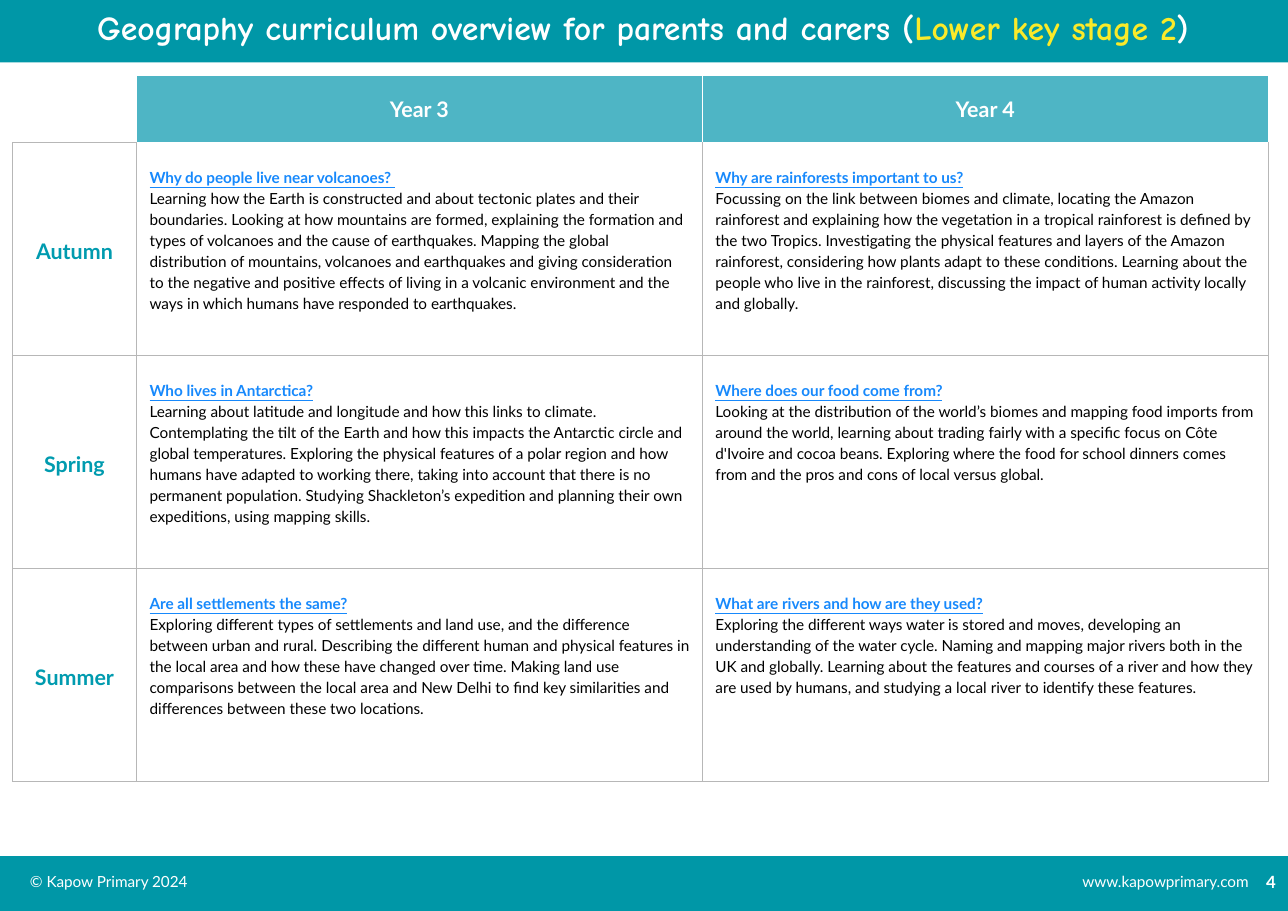
"""Build the Lower key stage 2 geography overview slide."""
from lxml.etree import SubElement
from pptx import Presentation
from pptx.dml.color import RGBColor
from pptx.enum.shapes import MSO_SHAPE
from pptx.enum.text import MSO_ANCHOR, MSO_AUTO_SIZE, PP_ALIGN
from pptx.oxml.ns import qn
from pptx.util import Pt

COLORS = {
    "teal": "0097A7", "header": "4EB5C5", "label": "009BAF", "link": "1789FC",
    "yellow": "FAEA2A", "grid": "B7B7B7", "white": "FFFFFF", "black": "000000",
}
WIDTH, HEIGHT = 841.68, 595.44
YEARS = ["Year 3", "Year 4"]
TERMS = {
    "Autumn": [
        ("Why do people live near volcanoes? ",
         "Learning how the Earth is constructed and about tectonic plates and their boundaries. "
         "Looking at how mountains are formed, explaining the formation and types of volcanoes "
         "and the cause of earthquakes. Mapping the global distribution of mountains, volcanoes "
         "and earthquakes and giving consideration to the negative and positive effects of living "
         "in a volcanic environment and the ways in which humans have responded to earthquakes."),
        ("Why are rainforests important to us?",
         "Focussing on the link between biomes and climate, locating the Amazon rainforest and "
         "explaining how the vegetation in a tropical rainforest is defined by the two Tropics. "
         "Investigating the physical features and layers of the Amazon rainforest, considering "
         "how plants adapt to these conditions. Learning about the people who live in the "
         "rainforest, discussing the impact of human activity locally and globally."),
    ],
    "Spring": [
        ("Who lives in Antarctica?",
         "Learning about latitude and longitude and how this links to climate. Contemplating the "
         "tilt of the Earth and how this impacts the Antarctic circle and global temperatures. "
         "Exploring the physical features of a polar region and how humans have adapted to "
         "working there, taking into account that there is no permanent population. Studying "
         "Shackleton’s expedition and planning their own expeditions, using mapping skills."),
        ("Where does our food come from?",
         "Looking at the distribution of the world’s biomes and mapping food imports from around "
         "the world, learning about trading fairly with a specific focus on Côte d'Ivoire and "
         "cocoa beans. Exploring where the food for school dinners comes from and the pros and "
         "cons of local versus global."),
    ],
    "Summer": [
        ("Are all settlements the same?",
         "Exploring different types of settlements and land use, and the difference between urban "
         "and rural. Describing the different human and physical features in the local area and "
         "how these have changed over time. Making land use comparisons between the local area "
         "and New Delhi to find key similarities and differences between these two locations."),
        ("What are rivers and how are they used?",
         "Exploring the different ways water is stored and moves, developing an understanding of "
         "the water cycle. Naming and mapping major rivers both in the UK and globally. Learning "
         "about the features and courses of a river and how they are used by humans, and studying "
         "a local river to identify these features."),
    ],
}


def rgb(name):
    return RGBColor.from_string(COLORS[name])


def style(p, size, color, bold=False, align=PP_ALIGN.LEFT, spacing=1.0, font="Lato"):
    p.alignment = align
    p.line_spacing = spacing
    p.font.name = font
    p.font.size = Pt(size)
    p.font.bold = bold
    p.font.color.rgb = rgb(color)


def set_margins(tf, x, y):
    tf.margin_left = tf.margin_right = Pt(x)
    tf.margin_top = tf.margin_bottom = Pt(y)


def add_bar(s, top, height):
    bar = s.shapes.add_shape(MSO_SHAPE.RECTANGLE, 0, Pt(top), Pt(WIDTH), Pt(height))
    bar.shadow.inherit = False
    bar.fill.solid()
    bar.fill.fore_color.rgb = rgb("teal")
    bar.line.fill.background()


def add_label(s, text, left, top, width, height, margin, size, **options):
    tf = s.shapes.add_textbox(Pt(left), Pt(top), Pt(width), Pt(height)).text_frame
    tf.word_wrap = True
    set_margins(tf, margin, margin)
    p = tf.paragraphs[0]
    p.text = text
    style(p, size, "white", **options)


def place_title(s):
    sp = s.shapes.title
    sp.left, sp.top, sp.width, sp.height = Pt(-0.7), Pt(-2.2), Pt(WIDTH), Pt(42.5)
    sp.element.getparent().append(sp.element)
    tf = sp.text_frame
    tf.auto_size = MSO_AUTO_SIZE.NONE
    tf.vertical_anchor = MSO_ANCHOR.TOP
    tf.word_wrap = True
    set_margins(tf, 9.4, 9.4)
    p = tf.paragraphs[0]
    style(p, 22, "white", True, PP_ALIGN.CENTER, 0.9, "Comic Neue")
    for text, color in [("Geography curriculum overview for parents and carers (", "white"),
                        ("Lower key stage 2", "yellow"), (")", "white")]:
        r = p.add_run()
        r.text = text
        r.font.color.rgb = rgb(color)


def set_borders(cell, **sides):
    tcPr = cell._tc.get_or_add_tcPr()
    for side in "LRTB":
        ln = SubElement(tcPr, qn(f"a:ln{side}"), w=str(Pt(0.75)))
        if side in sides:
            fill = SubElement(ln, qn("a:solidFill"))
            SubElement(fill, qn("a:srgbClr"), val=COLORS[sides[side]])
        else:
            SubElement(ln, qn("a:noFill"))


def fill_cell(cell, color=None):
    if color:
        cell.fill.solid()
        cell.fill.fore_color.rgb = rgb(color)
    else:
        cell.fill.background()
    set_margins(cell, 8.6, 10.8)


def head_cell(cell, text, color, spacing=1.0):
    cell.vertical_anchor = MSO_ANCHOR.MIDDLE
    p = cell.text_frame.paragraphs[0]
    p.text = text
    style(p, 14, color, True, PP_ALIGN.CENTER, spacing)


def topic_cell(cell, question, summary):
    tf = cell.text_frame
    p = tf.paragraphs[0]
    p.text = question
    style(p, 10, "link", True, spacing=1.5)
    p.font.underline = True
    p.runs[0].font.underline = True
    p = tf.add_paragraph()
    p.text = summary
    style(p, 10, "black", spacing=1.15)


def add_overview(s):
    widths, heights = [81, 369.8, 369.8], [38.5] + [139.3] * 3
    table = s.shapes.add_table(len(heights), len(widths), Pt(8.2), Pt(49.6),
                               Pt(sum(widths)), Pt(sum(heights))).table
    table.first_row = table.horz_banding = False
    for column, width in zip(table.columns, widths):
        column.width = Pt(width)
    for row, height in zip(table.rows, heights):
        row.height = Pt(height)

    set_borders(table.cell(0, 0), R="white", B="grid")
    fill_cell(table.cell(0, 0))
    for col, year in enumerate(YEARS, 1):
        cell = table.cell(0, col)
        set_borders(cell, L="white", R="white", T="white", B="white")
        fill_cell(cell, "header")
        head_cell(cell, year, "white")

    for row, (term, topics) in enumerate(TERMS.items(), 1):
        cell = table.cell(row, 0)
        set_borders(cell, L="grid", R="grid", T="grid", B="grid")
        fill_cell(cell, "white")
        head_cell(cell, term, "label", 1.15)
        for col, topic in enumerate(topics, 1):
            cell = table.cell(row, col)
            set_borders(cell, L="grid", R="grid", T="white" if row == 1 else "grid", B="grid")
            fill_cell(cell)
            topic_cell(cell, *topic)


def main():
    prs = Presentation()
    prs.slide_width, prs.slide_height = Pt(WIDTH), Pt(HEIGHT)
    s = prs.slides.add_slide(prs.slide_layouts[5])
    add_bar(s, 559.6, HEIGHT - 559.6)
    add_label(s, "© Kapow Primary 2024", 12.5, 564.3, 142, 26.5, 7.2, 10)
    add_label(s, "www.kapowprimary.com", 681, 564.3, 142, 26.5, 7.2, 10, align=PP_ALIGN.RIGHT)
    add_bar(s, 0, 40.8)
    place_title(s)
    add_overview(s)
    add_label(s, "4", 791.3, 563.2, 50.5, 45.5, 8, 11, bold=True, align=PP_ALIGN.RIGHT)
    prs.save("out.pptx")


if __name__ == "__main__":
    main()
